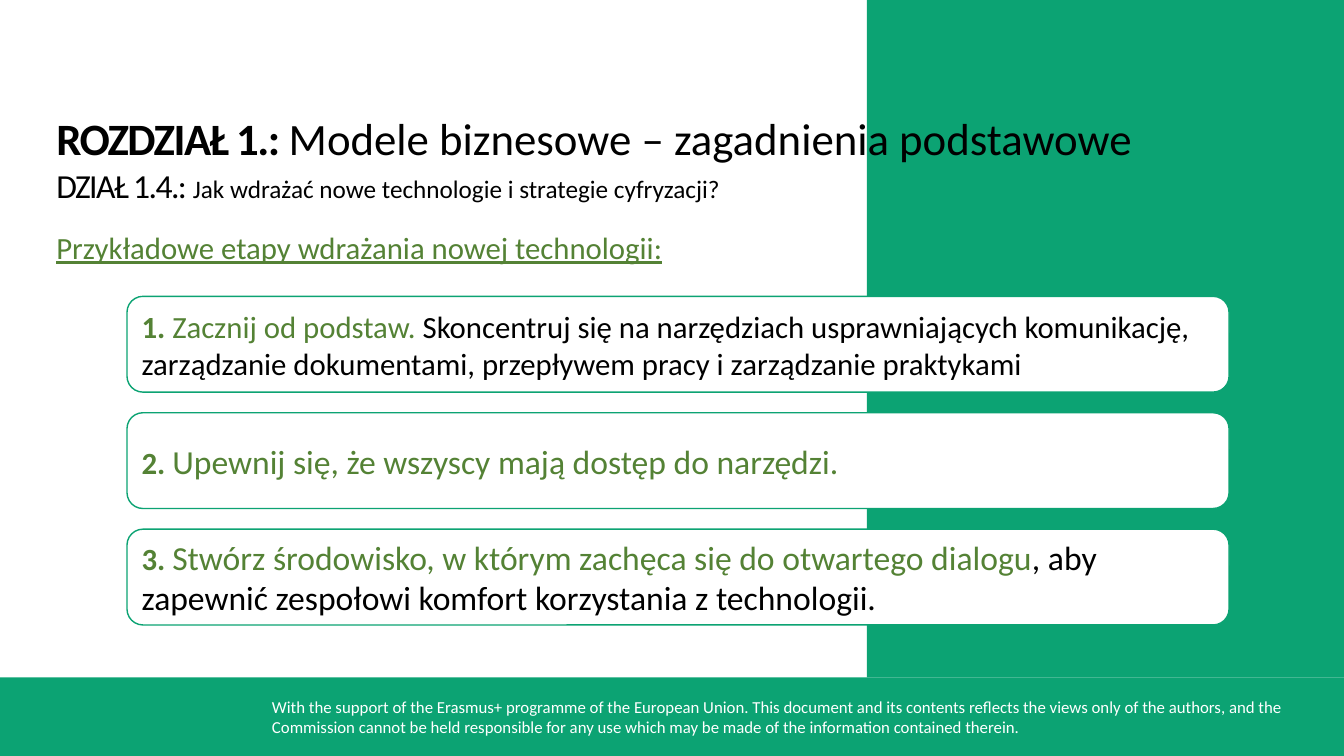
from pptx import Presentation
from pptx.dml.color import RGBColor
from pptx.enum.shapes import MSO_SHAPE as Shape
from pptx.enum.text import MSO_ANCHOR as Anchor, PP_ALIGN as Align
from pptx.util import Inches, Pt

GREEN = RGBColor(0x0C, 0xA3, 0x73)
OLIVE = RGBColor(0x54, 0x82, 0x35)
BLACK = RGBColor(0x00, 0x00, 0x00)
WHITE = RGBColor(0xFF, 0xFF, 0xFF)


class Page:
    """Places elements by percentages of the slide's width and height."""

    font = "Calibri"
    tight = -110  # letter spacing in hundredths of a point

    def __init__(self, deck):
        self.deck = deck
        self.slide = deck.slides.add_slide(deck.slide_layouts[6])

    def area(self, left, top, width, height):
        across, down = self.deck.slide_width / 100, self.deck.slide_height / 100
        return (round(left * across), round(top * down),
                round(width * across), round(height * down))

    def shape(self, kind, place, fill, line=None):
        shape = self.slide.shapes.add_shape(kind, *self.area(*place))
        shape.shadow.inherit = False
        shape.fill.solid()
        shape.fill.fore_color.rgb = fill
        if line is None:
            shape.line.fill.background()
        else:
            shape.line.color.rgb = line
            shape.line.width = Pt(1)
        return shape

    def band(self, *place):
        self.shape(Shape.RECTANGLE, place, GREEN)

    def card(self, place, spans):
        card = self.shape(Shape.ROUNDED_RECTANGLE, place, WHITE, GREEN)
        card.text_frame.vertical_anchor = Anchor.MIDDLE
        self.add_paras(card.text_frame, [(0, spans)])

    def text(self, place, paras):
        box = self.slide.shapes.add_textbox(*self.area(*place))
        self.add_paras(box.text_frame, paras)

    def add_paras(self, frame, paras):
        """Each para is (space before, spans)."""
        frame.word_wrap = True
        for number, (space, spans) in enumerate(paras):
            para = frame.add_paragraph() if number else frame.paragraphs[0]
            para.alignment = Align.LEFT
            if space:
                para.space_before = Pt(space)
            for span in spans:
                self.add_span(para, *span)

    def add_span(self, para, text, size, color, style=""):
        span = para.add_run()
        span.text = text
        span.font.name = self.font
        span.font.size = Pt(size)
        span.font.color.rgb = color
        span.font.bold = "bold" in style
        span.font.underline = "underline" in style
        if "tight" in style:
            span._r.get_or_add_rPr().set("spc", str(self.tight))


def main():
    deck = Presentation()
    deck.slide_width, deck.slide_height = Inches(13.33), Inches(7.5)
    page = Page(deck)

    # Footer band and statement
    page.band(0, 89.6, 100, 10.4)
    page.text((19.5, 91.47, 78.17, 6.67), [(0, [(
        "With the support of the Erasmus+ programme of the European Union. "
        "This document and its contents reflects the views only of the authors, "
        "and the Commission cannot be held responsible for any use which may be "
        "made of the information contained therein.", 12, WHITE)])])

    # Right panel
    page.band(64.5, 0, 35.5, 89.6)

    # Chapter, section and lead-in
    page.text((3.45, 14, 95.65, 22), [
        (0, [("ROZDZIAŁ 1.: ", 32, BLACK, "bold tight"),
             ("Modele biznesowe – zagadnienia podstawowe", 32, BLACK)]),
        (0, [("DZIAŁ 1.4.: ", 24, BLACK, "tight"),
             ("Jak wdrażać nowe technologie i strategie cyfryzacji?", 18, BLACK)]),
        (17, [("Przykładowe etapy wdrażania nowej technologii:",
               22, OLIVE, "underline")]),
    ])

    # Step cards
    steps = [
        [("Zacznij od podstaw. ", 22, OLIVE),
         ("Skoncentruj się na narzędziach usprawniających komunikację, "
          "zarządzanie dokumentami, przepływem pracy i zarządzanie praktykami",
          22, BLACK)],
        [("Upewnij się, że wszyscy mają dostęp do narzędzi.", 24, OLIVE)],
        [("Stwórz środowisko, w którym zachęca się do otwartego dialogu", 24, OLIVE),
         (", aby zapewnić zespołowi komfort korzystania z technologii.", 24, BLACK)],
    ]
    first_top, pitch = 39.2, 15.4
    for index, spans in enumerate(steps):
        number = (f"{index + 1}. ", 22, OLIVE, "bold")
        page.card((9.45, first_top + index * pitch, 82, 12.67), [number, *spans])

    deck.save("out.pptx")


if __name__ == "__main__":
    main()
